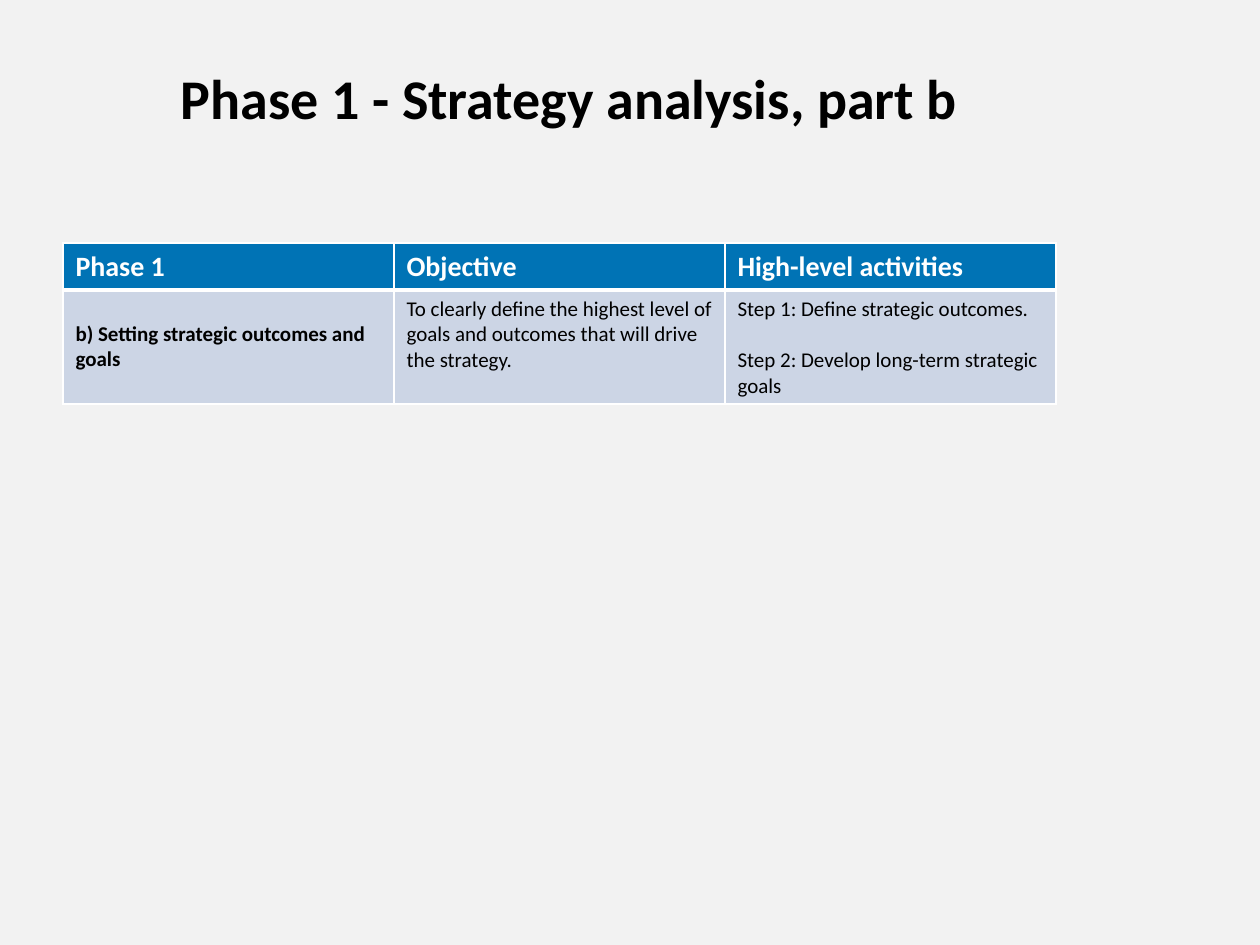
"""Build the slide on phase 1, part b, of the strategy analysis."""
from lxml.etree import SubElement
from pptx import Presentation
from pptx.dml.color import RGBColor
from pptx.enum.text import MSO_ANCHOR, MSO_AUTO_SIZE, PP_ALIGN
from pptx.oxml.ns import qn
from pptx.util import Emu, Pt

TITLE = "Phase 1 - Strategy analysis, part b"
HEADINGS = ["Phase 1", "Objective", "High-level activities"]
DETAILS = [
    ["b) Setting strategic outcomes and goals"],
    ["To clearly define the highest level of goals and outcomes that will drive the strategy."],
    ["Step 1: Define strategic outcomes.", "Step 2: Develop long-term strategic goals"],
]
COLORS = {"page": "F2F2F2", "header": "0073B5", "body": "CCD5E5", "white": "FFFFFF", "black": "000000"}
FONT = "Calibri"
TITLE_BOX = (168, 57, 871, 81)
TABLE_LEFT, TABLE_TOP = 63, 243
COLUMN_WIDTH = 331
ROW_HEIGHTS = [47, 114]
LINE_GAP = 14.65


def px(length):
    return Emu(round(length * 914400 / 126))


def color(name):
    return RGBColor.from_string(COLORS[name])


def style(para, size, name, bold):
    para.alignment = PP_ALIGN.LEFT
    para.font.name = FONT
    para.font.size = Pt(size)
    para.font.bold = bold
    para.font.color.rgb = color(name)


def add_borders(cell, top, bottom):
    properties = cell._tc.get_or_add_tcPr()
    for side, width in (("L", 1), ("R", 1), ("T", top), ("B", bottom)):
        line = SubElement(properties, qn(f"a:ln{side}"), w=str(Pt(width)))
        fill = SubElement(line, qn("a:solidFill"))
        SubElement(fill, qn("a:srgbClr"), val=COLORS["white"])


def fill_cell(cell, lines, fill, size, name, bold, borders):
    add_borders(cell, *borders)
    cell.fill.solid()
    cell.fill.fore_color.rgb = color(fill)
    cell.text = "\n".join(lines)
    for index, para in enumerate(cell.text_frame.paragraphs):
        style(para, size, name, bold)
        if index:
            para.space_before = Pt(LINE_GAP)


def add_title(page):
    box = page.shapes.title
    box.left, box.top, box.width, box.height = map(px, TITLE_BOX)
    frame = box.text_frame
    frame.text = TITLE
    frame.word_wrap = True
    frame.auto_size = MSO_AUTO_SIZE.SHAPE_TO_FIT_TEXT
    frame.vertical_anchor = MSO_ANCHOR.TOP
    style(frame.paragraphs[0], 32, "black", True)


def add_phase_table(page):
    count = len(HEADINGS)
    table = page.shapes.add_table(
        len(ROW_HEIGHTS), count, px(TABLE_LEFT), px(TABLE_TOP),
        px(COLUMN_WIDTH * count), px(sum(ROW_HEIGHTS)),
    ).table
    table.horz_banding = False
    for row, height in zip(table.rows, ROW_HEIGHTS):
        row.height = px(height)
    for index, (heading, lines) in enumerate(zip(HEADINGS, DETAILS)):
        table.columns[index].width = px(COLUMN_WIDTH)
        fill_cell(table.cell(0, index), [heading], "header", 16, "white", True, (1, 3))
        fill_cell(table.cell(1, index), lines, "body", 12, "black", index == 0, (3, 1))
    table.cell(1, 0).vertical_anchor = MSO_ANCHOR.MIDDLE


def main():
    deck = Presentation()
    deck.slide_width, deck.slide_height = px(1260), px(945)
    page = deck.slides.add_slide(deck.slide_layouts[5])
    page.background.fill.solid()
    page.background.fill.fore_color.rgb = color("page")
    add_title(page)
    add_phase_table(page)
    deck.save("out.pptx")


if __name__ == "__main__":
    main()
